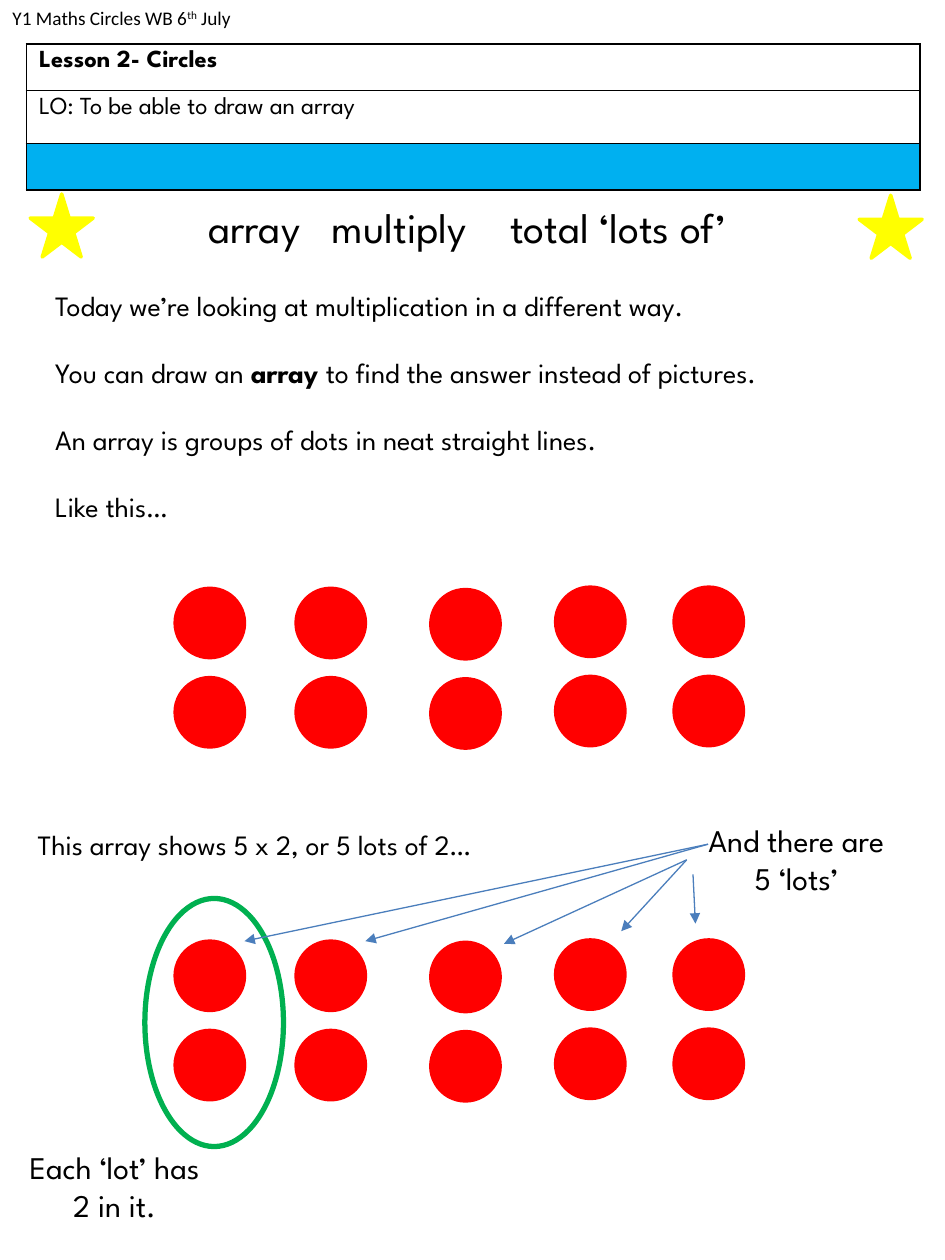
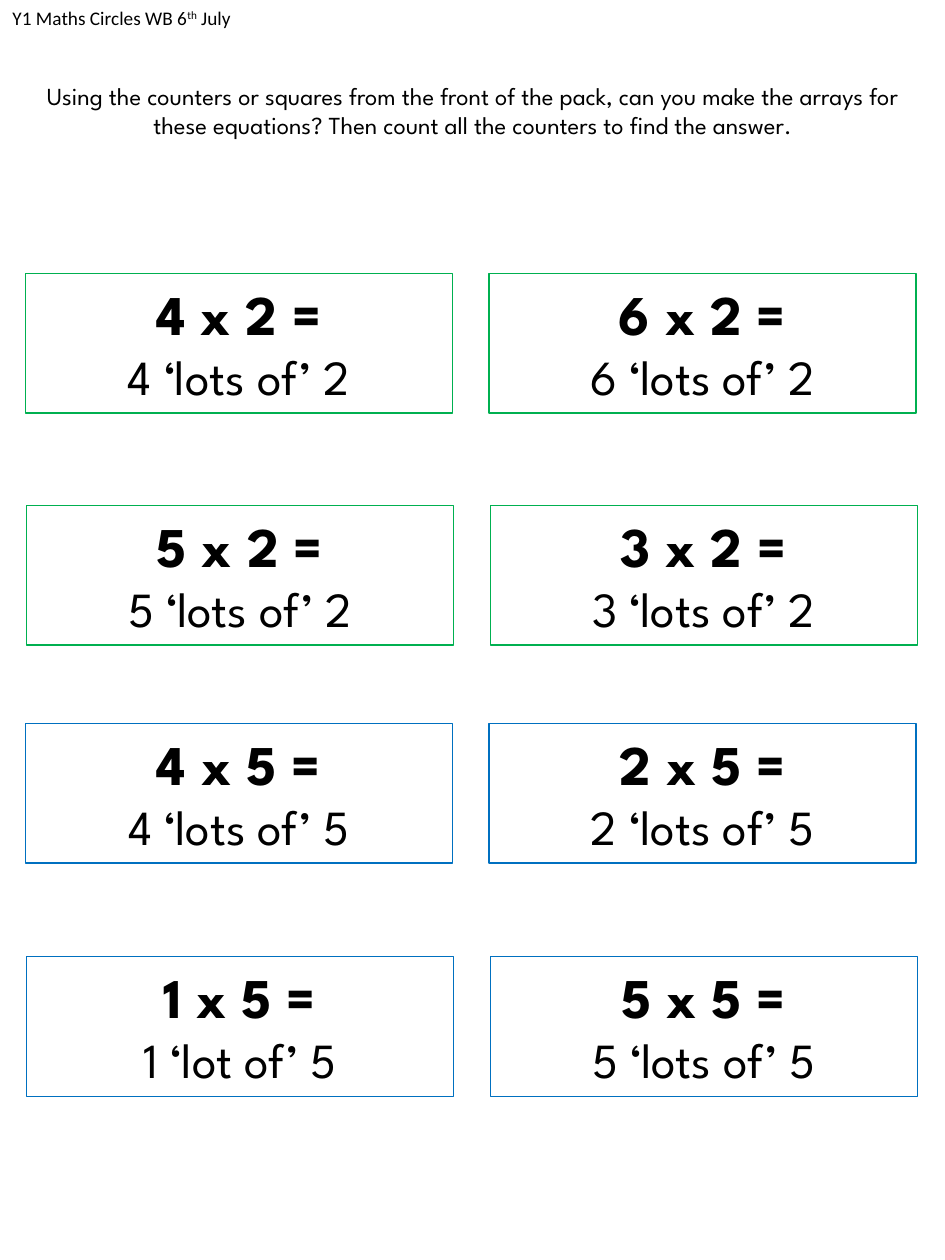
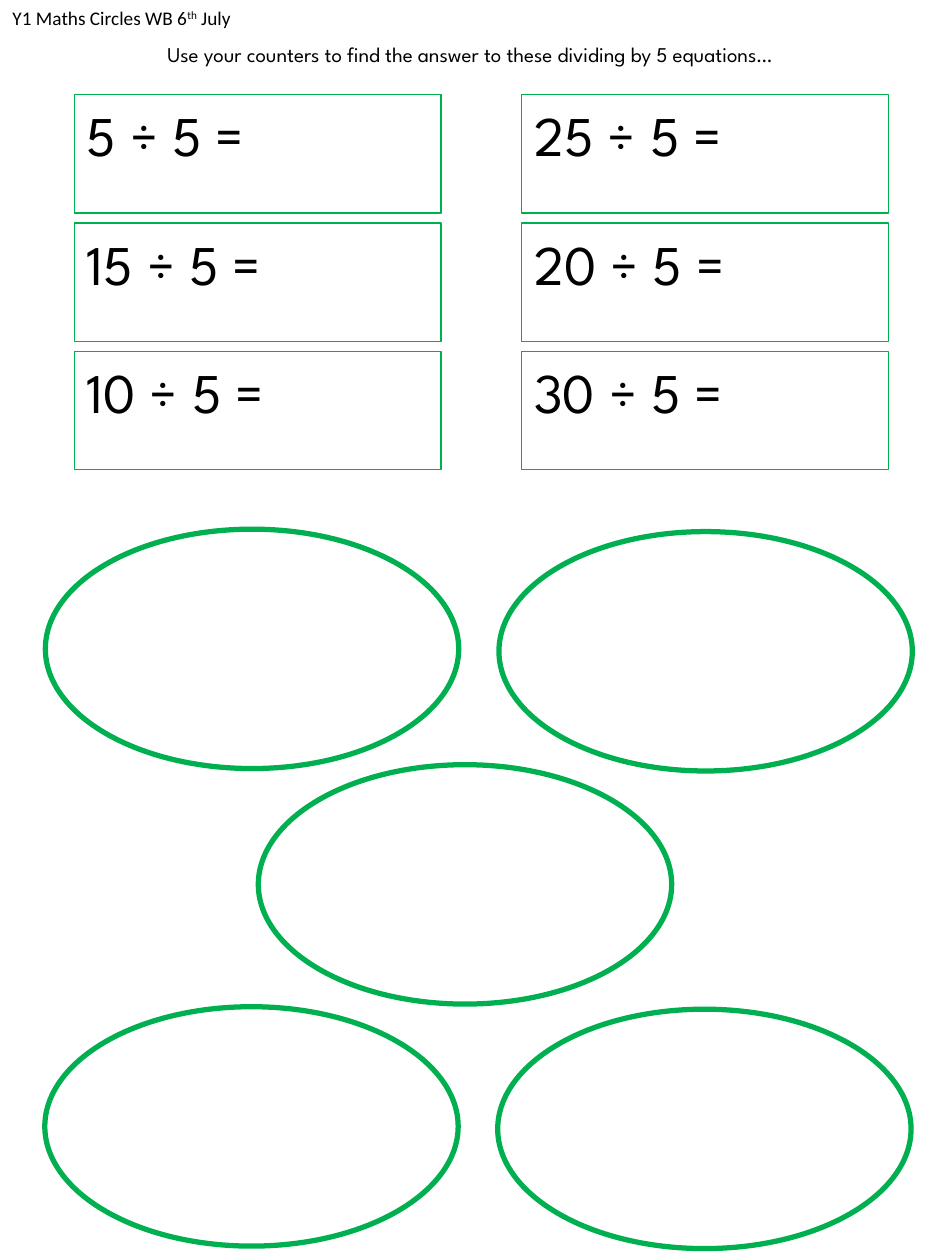
"""Build a three-page maths worksheet about arrays and dividing by five."""

from dataclasses import dataclass
from itertools import product

import pptx
import pptx.dml.color
import pptx.enum.shapes
import pptx.enum.text
import pptx.oxml.ns
import pptx.presentation
import pptx.shapes.autoshape
import pptx.shapes.connector
import pptx.slide
import pptx.util
from lxml import etree

Pt = pptx.util.Pt
RGBColor = pptx.dml.color.RGBColor
MSO_SHAPE = pptx.enum.shapes.MSO_SHAPE
PP_ALIGN = pptx.enum.text.PP_ALIGN
qn = pptx.oxml.ns.qn

BLACK = RGBColor(0x00, 0x00, 0x00)
GREEN = RGBColor(0x00, 0xB0, 0x50)
BLUE = RGBColor(0x00, 0x70, 0xC0)
SKY = RGBColor(0x00, 0xB0, 0xF0)
RED = RGBColor(0xFF, 0x00, 0x00)
YELLOW = RGBColor(0xFF, 0xFF, 0x00)
ARROW_BLUE = RGBColor(0x4B, 0x7E, 0xBC)

LESSON_FONT = "League Spartan"
HEADER_FONT = "Calibri"
DOT_SIZE = 39.6
DOT_ROW_STEP = 51
DOT_COLUMNS = [(100.1, 0), (169.2, 0), (246.2, 0.7), (317.5, -0.7), (385.2, -0.7)]


@dataclass(frozen=True)
class Box:
    """Position and size in points."""

    left: float
    top: float
    width: float
    height: float

    def lengths(self) -> tuple[pptx.util.Length, ...]:
        """Return left, top, width and height as lengths."""
        return Pt(self.left), Pt(self.top), Pt(self.width), Pt(self.height)


@dataclass(frozen=True)
class Line:
    """One paragraph; words between asterisks are bold."""

    text: str
    size: float
    bold: bool = False
    align: PP_ALIGN = PP_ALIGN.LEFT
    space_after: float = 0


@dataclass(frozen=True)
class Arrow:
    """A straight arrow between two points."""

    start: tuple[float, float]
    end: tuple[float, float]
    from_label: bool = False


def style_font(font, size: float, name: str = LESSON_FONT, bold: bool = False) -> None:
    """Set the common font properties."""
    font.name = name
    font.size = Pt(size)
    font.bold = bold
    font.color.rgb = BLACK


def fill_paragraph(paragraph, line: Line) -> None:
    """Write and format one line of text."""
    paragraph.alignment = line.align
    paragraph.space_after = Pt(line.space_after)
    style_font(paragraph.font, line.size, bold=line.bold)
    for index, part in enumerate(line.text.split("*")):
        run = paragraph.add_run()
        run.text = part
        if index % 2:
            run.font.bold = True


def add_text(
    slide: pptx.slide.Slide, box: Box, *lines: Line, outline: RGBColor | None = None
) -> pptx.shapes.autoshape.Shape:
    """Add a wrapping text box, with a thin outline if a colour is given."""
    shape = slide.shapes.add_textbox(*box.lengths())
    frame = shape.text_frame
    frame.word_wrap = True
    for index, line in enumerate(lines):
        paragraph = frame.add_paragraph() if index else frame.paragraphs[0]
        fill_paragraph(paragraph, line)
    if outline is not None:
        shape.line.color.rgb = outline
        shape.line.width = Pt(0.75)
    return shape


def add_figure(
    slide: pptx.slide.Slide,
    kind: MSO_SHAPE,
    box: Box,
    outline: RGBColor,
    width: float,
    filled: bool = True,
) -> None:
    """Add a preset shape in one colour, solid or hollow."""
    shape = slide.shapes.add_shape(kind, *box.lengths())
    shape.shadow.inherit = False
    if filled:
        shape.fill.solid()
        shape.fill.fore_color.rgb = outline
    else:
        shape.fill.background()
    shape.line.color.rgb = outline
    shape.line.width = Pt(width)


def add_ring(slide: pptx.slide.Slide, box: Box) -> None:
    """Add a hollow green ellipse."""
    add_figure(slide, MSO_SHAPE.OVAL, box, GREEN, 3, filled=False)


def add_arrow(
    slide: pptx.slide.Slide, arrow: Arrow, label: pptx.shapes.autoshape.Shape
) -> None:
    """Add an arrow, joined to the label's left side where it starts there."""
    connector = slide.shapes.add_connector(
        pptx.enum.shapes.MSO_CONNECTOR.STRAIGHT,
        *(Pt(value) for value in arrow.start + arrow.end),
    )
    if arrow.from_label:
        connector.begin_connect(label, 1)
    connector.line.color.rgb = ARROW_BLUE
    connector.line.width = Pt(0.75)
    properties = connector._element.spPr
    etree.SubElement(properties.find(qn("a:ln")), qn("a:tailEnd"), type="triangle")
    etree.SubElement(properties, qn("a:effectLst"))


def add_dots(slide: pptx.slide.Slide, top: float) -> None:
    """Add an array of five columns of two red dots."""
    for (left, shift), row in product(DOT_COLUMNS, range(2)):
        box = Box(left, top + shift + row * DOT_ROW_STEP, DOT_SIZE, DOT_SIZE)
        add_figure(slide, MSO_SHAPE.OVAL, box, RED, 2)


def add_page_header(slide: pptx.slide.Slide) -> None:
    """Add the line that heads every page."""
    shape = slide.shapes.add_textbox(*Box(0, 0, 287.3, 20.6).lengths())
    shape.text_frame.word_wrap = True
    paragraph = shape.text_frame.paragraphs[0]
    style_font(paragraph.font, 11, HEADER_FONT)
    for text, baseline in (("Y1 Maths Circles WB 6", 0), ("th", 30000), (" July", 0)):
        run = paragraph.add_run()
        run.text = text
        if baseline:
            run._r.get_or_add_rPr().set("baseline", str(baseline))


def border_cell(cell) -> None:
    """Give a cell a thin black border on all sides."""
    properties = cell._tc.get_or_add_tcPr()
    for side in ("L", "R", "T", "B"):
        border = etree.SubElement(properties, qn(f"a:ln{side}"), w=str(Pt(1)))
        solid = etree.SubElement(border, qn("a:solidFill"))
        etree.SubElement(solid, qn("a:srgbClr"), val=str(BLACK))


def add_lesson_table(slide: pptx.slide.Slide) -> None:
    """Add the lesson title, its objective and the blue band."""
    box = Box(15.1, 25.2, 510.5, 83.5)
    frame = slide.shapes.add_table(3, 1, *box.lengths())
    table = frame.table
    table.first_row = False
    table.horz_banding = False
    for row, height in zip(table.rows, (26.6, 30.3, 26.6)):
        row.height = Pt(height)
        border_cell(row.cells[0])
        row.cells[0].fill.background()
    lines = (
        Line("Lesson 2- Circles", 14, bold=True),
        Line("LO: To be able to draw an array", 14),
    )
    for index, line in enumerate(lines):
        fill_paragraph(table.cell(index, 0).text_frame.paragraphs[0], line)
    band = table.cell(2, 0)
    band.margin_top = band.margin_bottom = Pt(0)
    band.fill.solid()
    band.fill.fore_color.rgb = SKY


def add_key_words(slide: pptx.slide.Slide) -> None:
    """Add the key words, spaced by tab stops."""
    box = Box(12.2, 111.6, 510.5, 36)
    shape = add_text(slide, box, Line("array\tmultiply\ttotal ‘lots of’", 24))
    shape.text_frame.margin_left = Pt(106.8)
    properties = shape.text_frame.paragraphs[0]._p.get_or_add_pPr()
    stops = etree.Element(qn("a:tabLst"))
    for position in (70.5, 172.5):
        etree.SubElement(stops, qn("a:tab"), pos=str(Pt(position)), algn="l")
    properties.find(qn("a:defRPr")).addprevious(stops)


def build_array_slide(slide: pptx.slide.Slide) -> None:
    """Explain what an array is."""
    add_lesson_table(slide)
    add_key_words(slide)
    for left, top in ((491, 111.6), (17.3, 110.9)):
        add_figure(slide, MSO_SHAPE.STAR_5_POINT, Box(left, top, 36, 36), YELLOW, 2)
    sentences = (
        "Today we’re looking at multiplication in a different way.",
        "You can draw an *array *to find the answer instead of pictures.",
        "An array is groups of dots in neat straight lines.",
        "Like this…",
    )
    add_text(
        slide,
        Box(24.5, 161.3, 460.8, 162.7),
        *(Line(sentence, 16, space_after=19.2) for sentence in sentences),
    )
    add_text(
        slide,
        Box(14.4, 469.4, 481.7, 26.6),
        Line("This array shows 5 x 2, or 5 lots of 2…", 16),
    )
    add_text(
        slide,
        Box(2.9, 652.3, 125.3, 51.1),
        Line("Each ‘lot’ has 2 in it.", 18, align=PP_ALIGN.CENTER),
    )
    for top in (336.2, 537.8):
        add_dots(slide, top)
    add_ring(slide, Box(82.8, 513.4, 79.2, 141.8))
    label = add_text(
        slide,
        Box(392.4, 465.8, 125.3, 51.1),
        Line("And there are 5 ‘lots’", 18, align=PP_ALIGN.CENTER),
    )
    arrows = (
        Arrow((404.6, 482.4), (139.7, 537.8)),
        Arrow((404.6, 482.4), (208.8, 537.8)),
        Arrow((392.4, 491.4), (288, 539.3), from_label=True),
        Arrow((392.4, 491.4), (355, 532.1), from_label=True),
        Arrow((396, 499.7), (397.4, 527.8)),
    )
    for arrow in arrows:
        add_arrow(slide, arrow, label)


def build_multiply_slide(slide: pptx.slide.Slide) -> None:
    """Set out the multiplication cards."""
    add_text(
        slide,
        Box(15.1, 42.5, 510.5, 58.3),
        Line(
            "Using the counters or squares from the front of the pack, can you make "
            "the arrays for these equations? Then count all the counters to find "
            "the answer.",
            14,
            align=PP_ALIGN.CENTER,
        ),
    )
    rows = (
        (156.2, 14.4, 2, (4, 6), GREEN),
        (288.7, 15.1, 2, (5, 3), GREEN),
        (413.3, 14.4, 5, (4, 2), BLUE),
        (546.5, 15.1, 5, (1, 5), BLUE),
    )
    for top, left, size, counts, outline in rows:
        for column, count in enumerate(counts):
            lots = "lot" if count == 1 else "lots"
            add_text(
                slide,
                Box(left + column * 265, top, 244.1, 79.9),
                Line(f"{count} x {size} =", 32, bold=True, align=PP_ALIGN.CENTER),
                Line(f"{count} ‘{lots} of’ {size}", 28, align=PP_ALIGN.CENTER),
                outline=outline,
            )


def build_divide_slide(slide: pptx.slide.Slide) -> None:
    """Set out the division boxes and five sharing rings."""
    add_text(
        slide,
        Box(12.2, 20.2, 513.4, 51.1),
        Line(
            "Use your counters to find the answer to these dividing by 5 equations…",
            12,
            align=PP_ALIGN.CENTER,
        ),
    )
    for index, total in enumerate((5, 25, 15, 20, 10, 30)):
        row, column = divmod(index, 2)
        add_text(
            slide,
            Box(42.5 + column * 255.6, 54 + row * 73.4, 209.5, 67.7),
            Line(f"{total} ÷ 5 =", 32),
            outline=GREEN,
        )
    ring_corners = (
        (25.9, 302.4),
        (285.1, 303.8),
        (147.6, 437),
        (25.6, 575.3),
        (284.4, 576.7),
    )
    for left, top in ring_corners:
        add_ring(slide, Box(left, top, 236.2, 136.8))


def main() -> None:
    """Build and save the worksheet."""
    presentation = pptx.Presentation()
    presentation.slide_width = Pt(540)
    presentation.slide_height = Pt(720)
    for build in (build_array_slide, build_multiply_slide, build_divide_slide):
        slide = presentation.slides.add_slide(presentation.slide_layouts[6])
        build(slide)
        add_page_header(slide)
    presentation.save("out.pptx")


if __name__ == "__main__":
    main()
